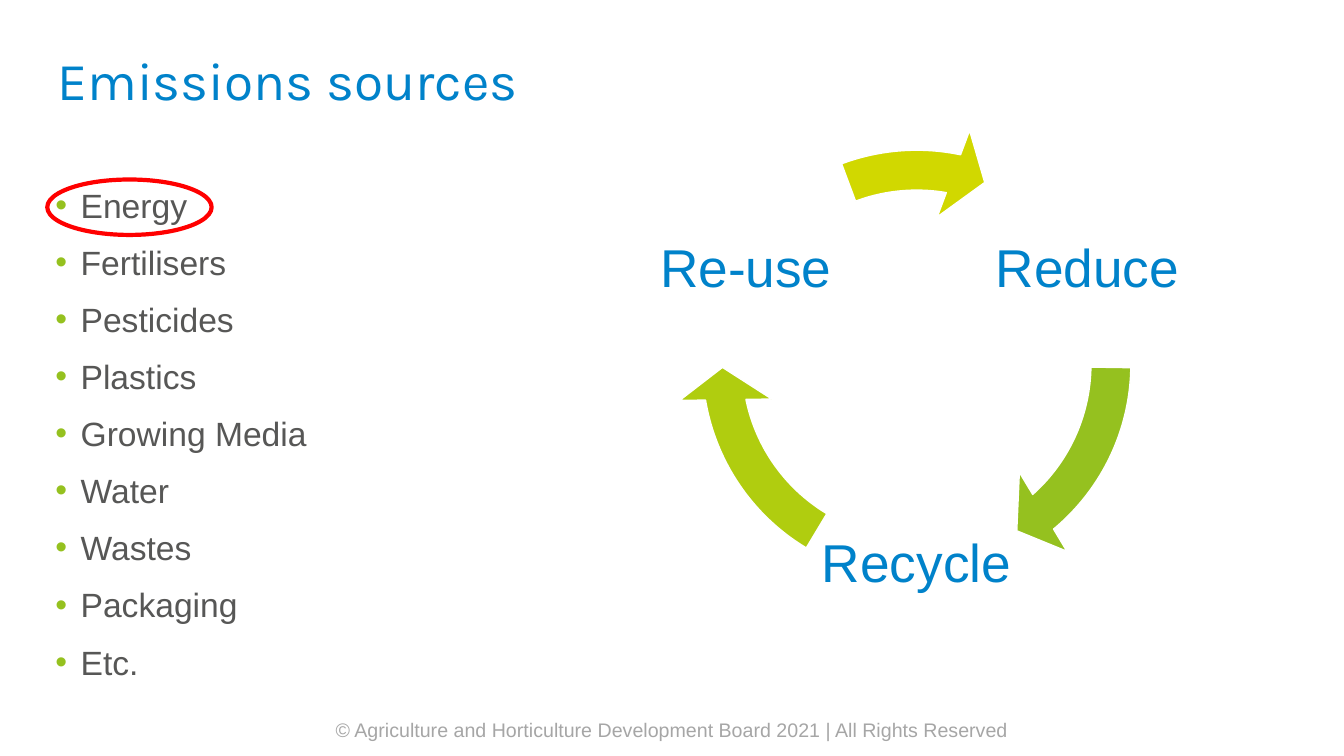
import pptx
import pptx.dml.color
import pptx.enum.shapes
import pptx.enum.text
import pptx.oxml
import pptx.oxml.ns
import pptx.util

Pt = pptx.util.Pt
RGBColor = pptx.dml.color.RGBColor
Align = pptx.enum.text.PP_ALIGN
Anchor = pptx.enum.text.MSO_ANCHOR
Shape = pptx.enum.shapes.MSO_SHAPE

BLUE = RGBColor(0x00, 0x82, 0xCA)
GREEN = RGBColor(0x95, 0xC1, 0x1F)
LIME = RGBColor(0xB0, 0xCD, 0x0F)
YELLOW = RGBColor(0xD1, 0xD8, 0x00)
GREY = RGBColor(0x57, 0x57, 0x56)
PALE_GREY = RGBColor(0xA6, 0xA6, 0xA6)
RED = RGBColor(0xFF, 0x00, 0x00)
WHITE = RGBColor(0xFF, 0xFF, 0xFF)

SOURCES = ["Energy", "Fertilisers", "Pesticides", "Plastics", "Growing Media",
           "Water", "Wastes", "Packaging", "Etc."]
LABEL_SIZE = 145.5
LABELS = [("Reduce", 704, 117.4), ("Recycle", 582, 328.3), ("Re-use", 460, 117.4)]
RING = (483.1, 88.6, 343.4, 343.4)
ARROWS = [(GREEN, 29.617, 0.532), (LIME, 101.702, 72.617), (YELLOW, 168.547, 149.687)]


def apply(target, values):
    for name, value in values.items():
        setattr(target, name, value)


def place(shape, bounds):
    for name, value in zip(("left", "top", "width", "height"), bounds):
        setattr(shape, name, Pt(value))


def write(para, text, size, color, font="Arial", **layout):
    para.text = text
    apply(para, layout)
    apply(para.font, {"name": font, "size": Pt(size), "bold": False})
    para.font.color.rgb = color


def set_frame(frame, anchor, **margins):
    apply(frame, {"word_wrap": True, "vertical_anchor": anchor,
                  "auto_size": pptx.enum.text.MSO_AUTO_SIZE.NONE, **margins})


def add_bullet(para, color):
    properties = para._p.get_or_add_pPr()
    apply(properties, {})
    properties.set("marL", str(Pt(18)))
    properties.set("indent", str(-Pt(18)))
    namespace = pptx.oxml.ns.nsdecls("a")
    for xml in (f'<a:buClr {namespace}><a:srgbClr val="{color}"/></a:buClr>',
                f'<a:buFont {namespace} typeface="Arial"/>',
                f'<a:buChar {namespace} char="•"/>'):
        properties.append(pptx.oxml.parse_xml(xml))


def fill_title(title):
    place(title, (33.8, 13.7, 895.7, 92.2))
    set_frame(title.text_frame, Anchor.MIDDLE)
    write(title.text_frame.paragraphs[0], "Emissions sources", 38, BLUE, "Karla",
          alignment=Align.LEFT, line_spacing=0.9)


def fill_list(body):
    place(body, (32.4, 128.2, 439.9, 385.2))
    frame = body.text_frame
    set_frame(frame, Anchor.TOP)
    for index, source in enumerate(SOURCES):
        para = frame.add_paragraph() if index else frame.paragraphs[0]
        add_bullet(para, GREEN)
        write(para, source, 24, GREY, space_before=Pt(12 if index else 0))


def add_text(page, text, bounds, size, color, anchor, **margins):
    box = page.shapes.add_textbox(*map(Pt, bounds))
    set_frame(box.text_frame, anchor, **margins)
    write(box.text_frame.paragraphs[0], text, size, color, alignment=Align.CENTER)


def add_outline(page, kind, bounds, line, width, fill=None):
    shape = page.shapes.add_shape(kind, *map(Pt, bounds))
    shape.shadow.inherit = False
    if fill is None:
        shape.fill.background()
    else:
        shape.fill.solid()
        shape.fill.fore_color.rgb = fill
    shape.line.color.rgb = line
    shape.line.width = Pt(width)
    return shape


def add_cycle_arrow(page, color, end, start):
    arrow = add_outline(page, Shape.CIRCULAR_ARROW, RING, WHITE, 1, color)
    for index, value in enumerate((0.083, 5.766, end, start, 0.096)):
        arrow.adjustments[index] = value


def main():
    deck = pptx.Presentation()
    apply(deck, {"slide_width": Pt(960), "slide_height": Pt(540)})
    page = deck.slides.add_slide(deck.slide_layouts[1])
    add_text(page, "© Agriculture and Horticulture Development Board 2021 | All Rights Reserved",
             (0, 509, 960, 24.5), 14, PALE_GREY, Anchor.TOP)
    fill_title(page.shapes.title)
    fill_list(page.placeholders[1])
    inset = dict.fromkeys(("margin_left", "margin_top", "margin_right", "margin_bottom"), Pt(3.6))
    for (text, left, top), arrow in zip(LABELS, ARROWS):
        add_text(page, text, (left, top, LABEL_SIZE, LABEL_SIZE), 38, BLUE, Anchor.MIDDLE, **inset)
        add_cycle_arrow(page, *arrow)
    add_outline(page, Shape.OVAL, (33.8, 128.2, 117.4, 39.6), RED, 3)
    deck.save("out.pptx")


if __name__ == "__main__":
    main()
